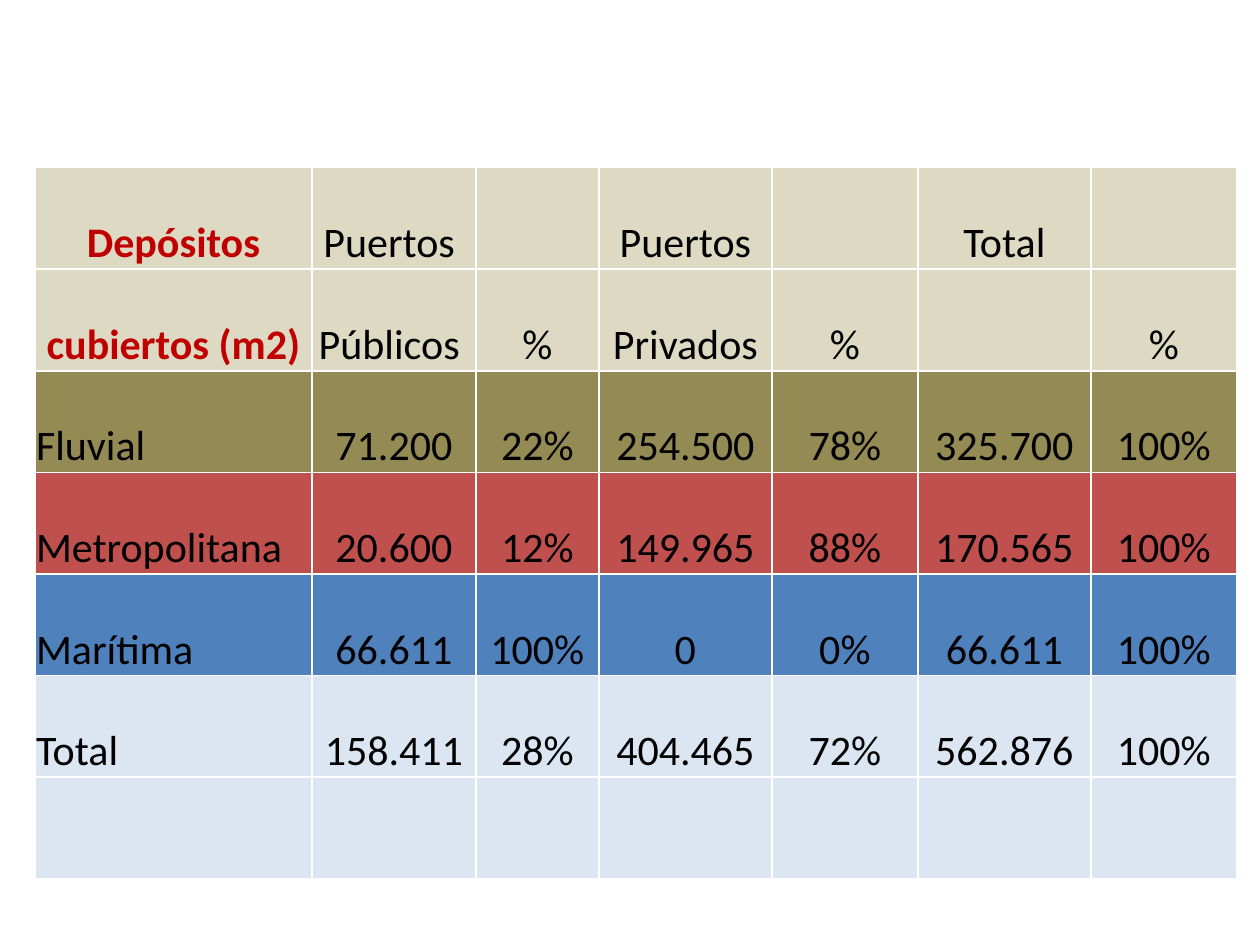
from dataclasses import dataclass

from lxml import etree
from pptx import Presentation
from pptx.dml.color import RGBColor
from pptx.enum.text import MSO_ANCHOR, PP_ALIGN
from pptx.oxml.ns import qn
from pptx.util import Pt

PX = 7257  # EMU in one px, at 126 px to the inch
LEFT, CENTER = PP_ALIGN.LEFT, PP_ALIGN.CENTER
BOTTOM = MSO_ANCHOR.BOTTOM
BLANK = 6

BLACK, WHITE, RED = "000000", "FFFFFF", "C00000"
SAND, OLIVE, BRICK, BLUE, PALE = "DDD9C3", "948A54", "C0504D", "4F81BD", "DCE6F2"
WIDTHS = (277, 164, 123, 173, 146, 173, 146)
X, Y, HIGH = 35, 66, 813


@dataclass(frozen=True)
class Row:
    fill: str
    texts: tuple[str, ...] = ("",) * len(WIDTHS)
    head: bool = False


ROWS = (
    Row(WHITE),
    Row(SAND, ("Depósitos", "Puertos ", "", "Puertos", "", "Total", ""), head=True),
    Row(SAND, ("cubiertos (m2)", "Públicos ", "%", "Privados", "%", "", "%"), head=True),
    Row(OLIVE, ("Fluvial", "71.200", "22%", "254.500", "78%", "325.700", "100%")),
    Row(BRICK, ("Metropolitana", "20.600", "12%", "149.965", "88%", "170.565", "100%")),
    Row(BLUE, ("Marítima", "66.611", "100%", "0", "0%", "66.611", "100%")),
    Row(PALE, ("Total", "158.411", "28%", "404.465", "72%", "562.876", "100%")),
    Row(PALE),
)


def color(code: str) -> RGBColor:
    return RGBColor.from_string(code)


def write(cell, text: str, *, ink: str = BLACK, bold: bool = False,
          align=CENTER, size: int = 24, font: str = "Calibri") -> None:
    cell.vertical_anchor = BOTTOM
    cell.margin_left = cell.margin_right = cell.margin_top = PX
    cell.margin_bottom = 0
    para = cell.text_frame.paragraphs[0]
    para.alignment = align
    run = para.add_run()
    run.text = text
    run.font.name, run.font.size, run.font.bold = font, Pt(size), bold
    run.font.color.rgb = color(ink)


def paint(cell, fill: str) -> None:
    """Give the cell white borders and a solid fill; borders must come first in the XML."""
    props = cell._tc.get_or_add_tcPr()
    for side in ("a:lnL", "a:lnR", "a:lnT", "a:lnB"):
        line = etree.SubElement(props, qn(side), w=str(Pt(1)))
        solid = etree.SubElement(line, qn("a:solidFill"))
        etree.SubElement(solid, qn("a:srgbClr"), val=WHITE)
    cell.fill.solid()
    cell.fill.fore_color.rgb = color(fill)


def draw(slide, rows: tuple[Row, ...]) -> None:
    table = slide.shapes.add_table(len(rows), len(WIDTHS), X * PX, Y * PX,
                                   sum(WIDTHS) * PX, HIGH * PX).table
    table.first_row = table.horz_banding = False
    for col, width in zip(table.columns, WIDTHS):
        col.width = width * PX
    for r, row in enumerate(rows):
        for c, text in enumerate(row.texts):
            cell = table.cell(r, c)
            paint(cell, row.fill)
            if text:
                label = row.head and c == 0
                write(cell, text, ink=RED if label else BLACK, bold=label,
                      align=CENTER if row.head or c else LEFT)


def main() -> None:
    deck = Presentation()
    deck.slide_width, deck.slide_height = 1260 * PX, 945 * PX
    draw(deck.slides.add_slide(deck.slide_layouts[BLANK]), ROWS)
    deck.save("out.pptx")


if __name__ == "__main__":
    main()
